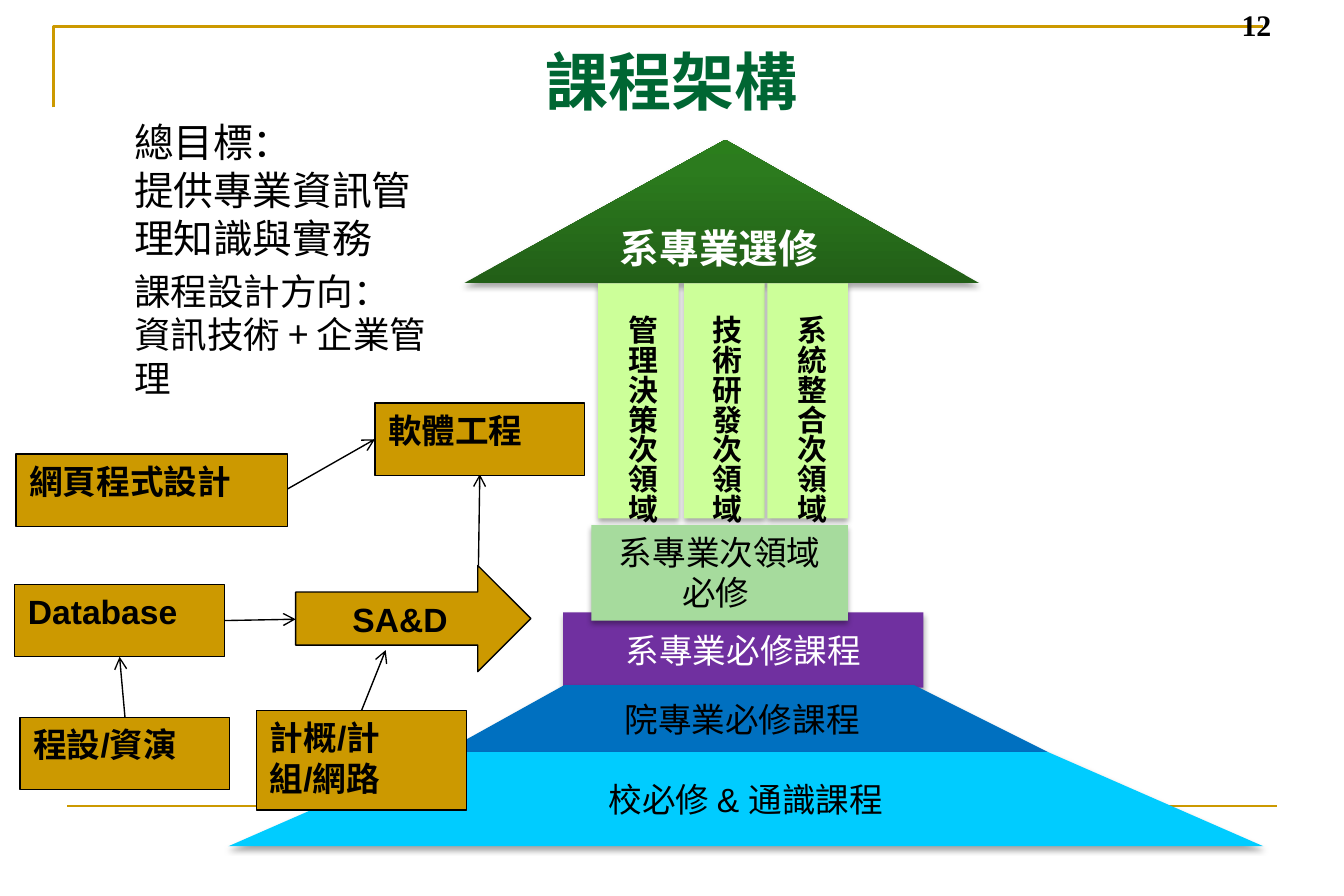
"""Build the curriculum structure slide on a grid of 100 columns, ten to the inch."""
from typing import NamedTuple

from lxml import etree
from pptx import Presentation
from pptx import util as u
from pptx.dml.color import RGBColor
from pptx.enum import shapes, text
from pptx.oxml import ns, parse_xml

HUE = {"gold": "CC9900", "green": "006633", "black": "000000", "white": "FFFFFF",
       "blue": "0070C0", "cyan": "00CCFF", "purple": "7030A0", "lime": "CCFF99",
       "sage": "A6DB9D", "deep": "225F17", "mid": "2C7B1E", "leaf": "2B7E1C"}
KIND = shapes.MSO_SHAPE
MID, TOP = text.MSO_ANCHOR.MIDDLE, text.MSO_ANCHOR.TOP
LEFT, CENTER = text.PP_ALIGN.LEFT, text.PP_ALIGN.CENTER
SANS, SERIF, CJK = "Arial", "Times New Roman", "Noto Sans CJK SC"


class Box(NamedTuple):
    col: float
    row: float
    wide: float
    high: float


class Tier(NamedTuple):
    points: list
    hue: str
    label: str


class Block(NamedTuple):
    box: Box
    label: str


class Arrow(NamedTuple):
    start: tuple
    end: tuple


TIERS = [
    Tier([(32.8, 56.1), (42.2, 51.2), (68.2, 51.2), (77.6, 56.1)], "blue", "院專業必修課程 "),
    Tier([(17.4, 63), (33.4, 56.3), (77.7, 56.3), (93.7, 63)], "cyan", "校必修 & 通識課程"),
]
PILLARS = [Block(Box(44.5, 21.1, 6, 17.5), "管理決策次領域"),
           Block(Box(50.9, 21.1, 6, 17.5), "技術研發次領域"),
           Block(Box(57.1, 21.1, 6, 17.5), "系統整合次領域")]
COURSES = [Block(Box(1.1, 43.5, 15.6, 5.4), "Database"),
           Block(Box(27.9, 30, 15.6, 5.4), "軟體工程"),
           Block(Box(1.2, 33.8, 20.2, 5.4), "網頁程式設計"),
           Block(Box(1.5, 53.4, 15.6, 5.4), "程設/資演"),
           Block(Box(19.1, 52.9, 15.6, 7.4), "計概/計組/網路")]
ARROWS = [Arrow((16.7, 46.2), (22, 46.1)), Arrow((35.6, 42.1), (35.7, 35.3)),
          Arrow((21.4, 36.4), (27.9, 32.7)), Arrow((9.3, 53.4), (8.9, 48.9)),
          Arrow((26.9, 52.9), (28.7, 48.4))]


def cell(n: float) -> int:
    return u.Inches(n / 10)


def tint(hue: str) -> RGBColor:
    return RGBColor.from_string(HUE[hue])


def write(shape, *lines: str, size: float = 18, sizes: tuple = (), font: str = SANS,
          hue: str = "black", bold: bool = False, align=LEFT, anchor=TOP,
          wrap: bool = True, gap: float = 0, upright: bool = False) -> None:
    frame = shape.text_frame
    frame.word_wrap, frame.vertical_anchor = wrap, anchor
    frame.margin_left = frame.margin_right = cell(1)
    frame.margin_top = frame.margin_bottom = cell(0.5)
    if upright:
        frame._txBody.bodyPr.set("vert", "eaVert")
    for i, line in enumerate(lines):
        para = frame.paragraphs[0] if i == 0 else frame.add_paragraph()
        para.text, para.alignment = line, align
        para.space_before = u.Pt(gap)
        for run in para.runs:
            run.font.size = u.Pt(sizes[i] if sizes else size)
            run.font.name, run.font.bold = font, bold
            run.font.color.rgb = tint(hue)


def shade(shape) -> None:
    shape._element.spPr.append(parse_xml(
        f'<a:effectLst {ns.nsdecls("a")}><a:outerShdw blurRad="39370" dist="22860" '
        'dir="5400000" rotWithShape="0"><a:srgbClr val="000000"><a:alpha val="35000"/>'
        '</a:srgbClr></a:outerShdw></a:effectLst>'))


def paint(shape, hue: str, edge: str = "", glow: bool = True) -> None:
    shape.fill.solid()
    shape.fill.fore_color.rgb = tint(hue)
    if edge:
        shape.line.color.rgb, shape.line.width = tint(edge), u.Pt(0.75)
    else:
        shape.line.fill.background()
    if glow:
        shade(shape)
    else:
        shape.shadow.inherit = False


def place(slide, box: Box, hue: str, kind=KIND.RECTANGLE, **style):
    shape = slide.shapes.add_shape(kind, *map(cell, box))
    paint(shape, hue, **style)
    return shape


def note(slide, box: Box, *lines: str, **style) -> None:
    write(slide.shapes.add_textbox(*map(cell, box)), *lines, **style)


def trace(slide, points: list, close: bool = True):
    path = slide.shapes.build_freeform(*points[0], scale=float(cell(1)))
    path.add_line_segments(points[1:], close=close)
    return path.convert_to_shape()


def link(slide, arrow: Arrow, hue: str = "black", width: float = 0.75, tip: bool = True) -> None:
    line = slide.shapes.add_connector(shapes.MSO_CONNECTOR.STRAIGHT,
                                      *map(cell, arrow.start + arrow.end))
    line.line.color.rgb, line.line.width = tint(hue), u.Pt(width)
    if tip:
        etree.SubElement(line.line._get_or_add_ln(), ns.qn("a:tailEnd"), type="arrow")
    etree.SubElement(line._element.spPr, ns.qn("a:effectLst"))


def roof(slide) -> None:
    shape = place(slide, Box(34.5, 10.4, 38.4, 10.7), "mid", KIND.ISOSCELES_TRIANGLE)
    shape.adjustments[0] = 0.507
    stops = "".join(f'<a:gs pos="{pos}000"><a:srgbClr val="{HUE[hue]}"/></a:gs>'
                    for pos, hue in ((0, "deep"), (80, "mid"), (100, "leaf")))
    props = shape._element.spPr
    props.replace(props.find(ns.qn("a:solidFill")), parse_xml(
        f'<a:gradFill {ns.nsdecls("a")} rotWithShape="1"><a:gsLst>{stops}</a:gsLst>'
        '<a:lin ang="16200000" scaled="0"/></a:gradFill>'))
    write(shape, "系專業選修 ", size=21.3, hue="white", bold=True, align=CENTER,
          anchor=MID, wrap=False)


def frame(slide) -> None:
    edge = trace(slide, [(4.2, 8.1), (4.2, 2.2), (94.2, 2.2)], close=False)
    edge.fill.background()
    edge.line.color.rgb, edge.line.width = tint("gold"), u.Pt(1.5)
    edge.shadow.inherit = False
    link(slide, Arrow((5, 60), (95, 60)), "gold", 1.5, tip=False)
    note(slide, Box(5, 2.7, 90, 11.1), "課程架構", size=33.8, font=SERIF,
         hue="green", bold=True, align=CENTER)
    note(slide, Box(91.4, 0, 4.3, 3.7), "12", size=16, font=SERIF, bold=True, wrap=False)
    note(slide, Box(9, 8.3, 25, 51.1), "總目標：\v提供專業資訊管理知識與實務",
         "課程設計方向：\v資訊技術 + 企業管理", sizes=(21.3, 19.6), font=CJK, gap=4)


def tower(slide) -> None:
    middle = dict(align=CENTER, anchor=MID, wrap=False)
    base = place(slide, Box(41.9, 45.6, 26.8, 5.6), "purple")
    write(base, "系專業必修課程", hue="white", **middle)
    roof(slide)
    for pillar in PILLARS:
        place(slide, pillar.box, "lime")
    step = place(slide, Box(44, 39.1, 19.1, 7.1), "sage")
    write(step, "系專業次領域\v必修 ", align=CENTER)
    for i, pillar in enumerate(PILLARS):
        note(slide, Box(44.9 + 6.3 * i, 22.5, 4.7, 16.5), pillar.label, size=16,
             bold=True, wrap=False, upright=True)
    for tier in TIERS:
        shape = trace(slide, tier.points)
        paint(shape, tier.hue)
        write(shape, tier.label, **middle)


def flow(slide) -> None:
    style = dict(edge="black", glow=False)
    core = place(slide, Box(22, 42.1, 17.5, 7.9), "gold", KIND.RIGHT_ARROW, **style)
    write(core, "SA&D", bold=True, align=CENTER)
    for arrow in ARROWS:
        link(slide, arrow)
    for course in COURSES:
        write(place(slide, course.box, "gold", **style), course.label, bold=True)


def main() -> None:
    deck = Presentation()
    deck.slide_width, deck.slide_height = cell(100), cell(66.7)
    slide = deck.slides.add_slide(deck.slide_layouts[6])
    for draw in (frame, tower, flow):
        draw(slide)
    deck.save("out.pptx")


if __name__ == "__main__":
    main()
